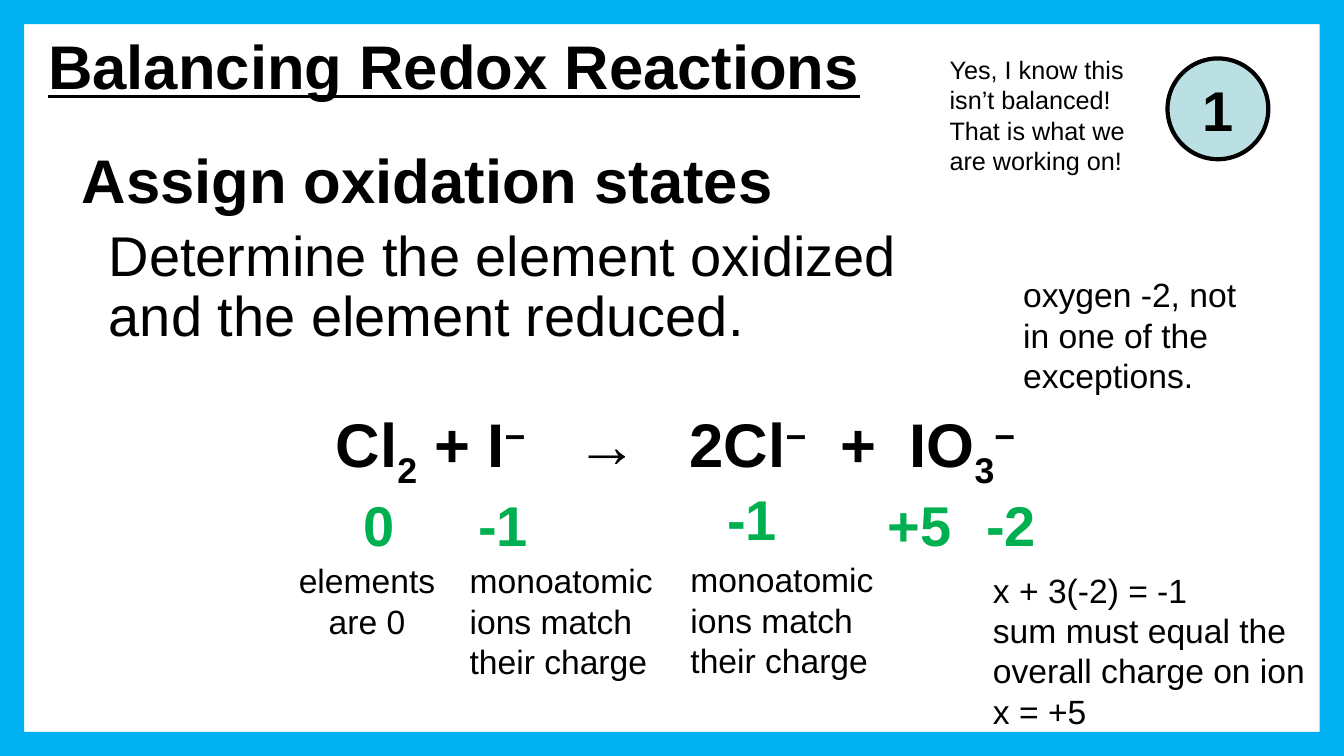
from dataclasses import dataclass

from lxml import etree
from pptx import Presentation
from pptx import util as u
from pptx.dml.color import RGBColor
from pptx.enum import shapes, text
from pptx.oxml.ns import qn


@dataclass(frozen=True)
class Theme:
    font: str = "Arial"
    ink: str = "000000"
    state: str = "00B050"
    frame: str = "00B0F0"
    badge: str = "BBE0E3"
    title_size: int = 44
    body_size: int = 40
    note_size: int = 24
    aside_size: int = 18


class SlideBuilder:
    def __init__(self, slide, theme):
        self.slide = slide
        self.theme = theme

    def add_run(self, paragraph, words, size, color=None, bold=False, underline=False, baseline=0):
        """Append a run; baseline is a percentage, negative for a subscript."""
        run = paragraph.add_run()
        run.text = words
        font = run.font
        font.name, font.size = self.theme.font, u.Pt(size)
        font.bold, font.underline = bold, underline
        font.color.rgb = RGBColor.from_string(color or self.theme.ink)
        if baseline:
            font._element.set("baseline", str(baseline * 1000))

    def add_frame(self, left, top, width, height, anchor=text.MSO_ANCHOR.TOP):
        box = self.slide.shapes.add_textbox(*map(u.Inches, (left, top, width, height)))
        box.text_frame.word_wrap = True
        box.text_frame.vertical_anchor = anchor
        return box.text_frame

    def add_text(self, place, lines, size, align=text.PP_ALIGN.LEFT,
                 anchor=text.MSO_ANCHOR.TOP, **style):
        frame = self.add_frame(*place, anchor=anchor)
        for index, line in enumerate(lines):
            paragraph = frame.add_paragraph() if index else frame.paragraphs[0]
            paragraph.alignment = align
            self.add_run(paragraph, line, size, **style)
        return frame

    def add_equation(self, place, indent, stops, parts):
        """Set (words, baseline) parts on one line, with tabs at the stops."""
        frame = self.add_frame(*place)
        frame.margin_left = u.Inches(indent)
        paragraph = frame.paragraphs[0]
        tabs = etree.SubElement(paragraph._p.get_or_add_pPr(), qn("a:tabLst"))
        for stop in stops:
            etree.SubElement(tabs, qn("a:tab"), pos=str(u.Inches(stop)), algn="l")
        for words, baseline in parts:
            self.add_run(paragraph, words, self.theme.title_size, bold=True, baseline=baseline)

    def add_shape(self, kind, place, fill, line_width=0):
        shape = self.slide.shapes.add_shape(kind, *map(u.Inches, place))
        shape.shadow.inherit = False
        shape.fill.solid()
        shape.fill.fore_color.rgb = RGBColor.from_string(fill)
        if line_width:
            shape.line.color.rgb = RGBColor.from_string(self.theme.ink)
            shape.line.width = u.Pt(line_width)
        else:
            shape.line.fill.background()
        return shape

    def add_badge(self, place, label):
        badge = self.add_shape(shapes.MSO_SHAPE.OVAL, place, self.theme.badge, line_width=3)
        badge.text_frame.vertical_anchor = text.MSO_ANCHOR.MIDDLE
        paragraph = badge.text_frame.paragraphs[0]
        paragraph.alignment = text.PP_ALIGN.CENTER
        self.add_run(paragraph, label, self.theme.body_size, bold=True)


def add_instructions(builder):
    theme = builder.theme
    builder.add_text((0.38, 0.33, 8.5, 0.63), ["Balancing Redox Reactions"], theme.title_size,
                     anchor=text.MSO_ANCHOR.MIDDLE, bold=True, underline=True)
    frame = builder.add_frame(0.54, 1.44, 8.98, 3.17)
    step, detail = frame.paragraphs[0], frame.add_paragraph()
    builder.add_run(step, "Assign oxidation states", theme.title_size, bold=True)
    builder.add_run(detail, "Determine the element oxidized and the element reduced.",
                    theme.body_size)
    for paragraph, size, indent in ((step, theme.title_size, 0.17),
                                    (detail, theme.body_size, 0.44)):
        paragraph.line_spacing = 0.9
        paragraph.space_before = u.Pt(size * 0.2)
        properties = paragraph._p.get_or_add_pPr()
        properties.set("marL", str(u.Inches(indent)))
        properties.set("indent", "0")


def add_reaction(builder):
    theme = builder.theme
    builder.add_equation(
        (2.74, 3.98, 8.04, 0.84), 0.59, (2.39, 3.51, 5.01, 5.69),
        [("Cl", 0), ("2", -25), (" + I", 0), ("−", 30), ("\t→\t2Cl", 0),
         ("−", 30), ("\t+\tIO", 0), ("3", -25), ("−", 30)])
    for state, left, top, width in (("0", 3.45, 4.82, 0.62), ("-1", 4.56, 4.82, 0.86),
                                    ("-1", 7.03, 4.76, 0.86), ("+5", 8.69, 4.82, 0.86),
                                    ("-2", 9.6, 4.82, 0.86)):
        builder.add_text((left, top, width, 0.77), [state], theme.body_size,
                         align=text.PP_ALIGN.CENTER, color=theme.state, bold=True)


def add_notes(builder):
    theme = builder.theme
    builder.add_text((2.85, 5.51, 1.58, 0.91), ["elements are 0"], theme.note_size,
                     align=text.PP_ALIGN.CENTER)
    ion_rule = ["monoatomic ions match their charge"]
    for place, lines in (
            ((4.56, 5.51, 2.04, 1.31), ion_rule),
            ((6.75, 5.5, 2.04, 1.31), ion_rule),
            ((10.05, 2.67, 2.54, 1.31), ["oxygen -2, not in one of the exceptions."]),
            ((9.75, 5.6, 3.33, 1.72), ["x + 3(-2) = -1",
                                       "sum must equal the overall charge on ion",
                                       "x = +5"])):
        builder.add_text(place, lines, theme.note_size)


def main():
    presentation = Presentation()
    presentation.slide_width, presentation.slide_height = u.Inches(13.33), u.Inches(7.5)
    slide = presentation.slides.add_slide(presentation.slide_layouts[6])
    builder = SlideBuilder(slide, Theme())
    add_instructions(builder)
    border = builder.add_shape(shapes.MSO_SHAPE.FRAME, (0, 0, 13.33, 7.5), builder.theme.frame)
    border.adjustments[0] = 0.032
    add_reaction(builder)
    add_notes(builder)
    builder.add_badge((11.58, 0.58, 1, 1), "1")
    builder.add_text((9.32, 0.49, 2.2, 1.31),
                     ["Yes, I know this isn’t balanced! That is what we are working on!"],
                     builder.theme.aside_size)
    presentation.save("out.pptx")


if __name__ == "__main__":
    main()
